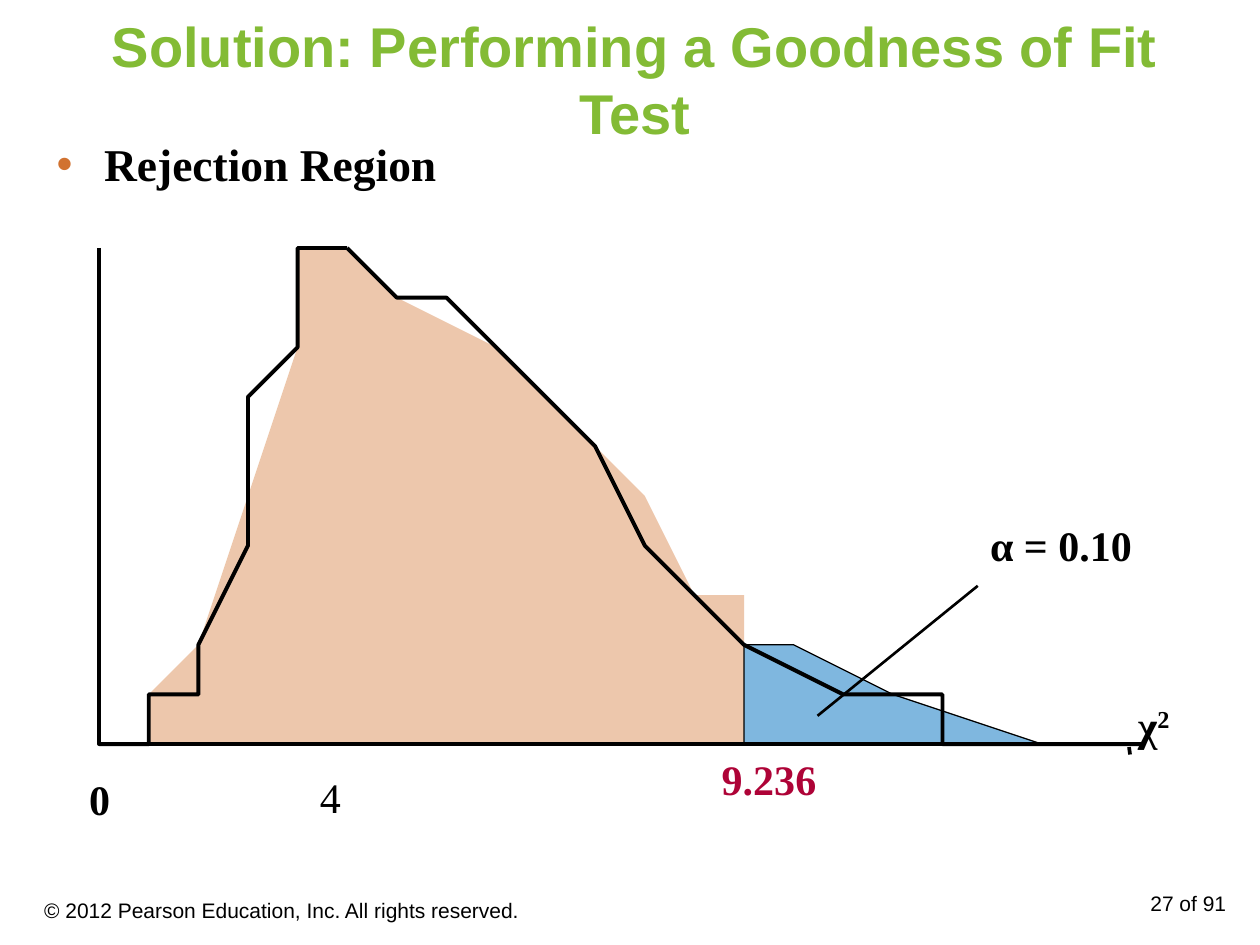
from dataclasses import dataclass

from lxml import etree
from pptx import Presentation
from pptx import util as u
from pptx.dml import color
from pptx.enum import shapes, text
from pptx.oxml import ns

SERIF, SANS = "Times New Roman", "Arial"
BLACK = "000000"
AXIS_LEFT, PEAK_X, AXIS_RIGHT = 2.34, 6.6, 22.76
PEAK_Y, BASELINE = 4.98, 15.06
STEPS = (0, 2, 3, 4, 5, 6, 7, 9, 11, 13, 14, 15, 16, 17, 18, 19)
HEIGHTS = (BASELINE, 14.96, 14.83, 14.68, 14.43, 14.12, 13.72, 12.55,
           10.9, 8.92, 7.9, 6.99, 6.15, 5.51, 5.11, PEAK_Y)

Point = tuple[float, float]


@dataclass(frozen=True)
class Label:
    words: str
    left: float
    top: float
    width: float
    height: float
    size: float = 24
    font: str = SERIF
    ink: str = BLACK
    bold: bool = True
    align: text.PP_ALIGN = text.PP_ALIGN.LEFT
    anchor: text.MSO_ANCHOR = text.MSO_ANCHOR.TOP
    inset: bool = True
    superscript: str = ""
    bullet: str = ""


@dataclass(frozen=True)
class Outline:
    points: tuple[Point, ...]
    fill: str = ""
    opacity: int = 100
    line: str = ""
    weight: float = 0


def rgb(value: str) -> color.RGBColor:
    return color.RGBColor.from_string(value)


def curve_side(foot: float) -> tuple[Point, ...]:
    reach = (PEAK_X - foot) / STEPS[-1]
    return tuple((foot + step * reach, y) for step, y in zip(STEPS, HEIGHTS))


def add_bullet(para, ink: str) -> None:
    properties = para._p.get_or_add_pPr()
    properties.set("marL", str(u.Cm(0.96)))
    properties.set("indent", str(-u.Cm(0.96)))
    tint = etree.SubElement(properties, ns.qn("a:buClr"))
    etree.SubElement(tint, ns.qn("a:srgbClr"), val=ink)
    etree.SubElement(properties, ns.qn("a:buFont"), typeface=SANS)
    etree.SubElement(properties, ns.qn("a:buChar"), char="•")


def draw_label(page, label: Label) -> None:
    box = page.shapes.add_textbox(u.Cm(label.left), u.Cm(label.top),
                                  u.Cm(label.width), u.Cm(label.height))
    frame = box.text_frame
    frame.word_wrap = True
    frame.vertical_anchor = label.anchor
    if not label.inset:
        frame.margin_left = frame.margin_right = 0
        frame.margin_top = frame.margin_bottom = 0
    para = frame.paragraphs[0]
    para.alignment = label.align
    if label.bullet:
        add_bullet(para, label.bullet)
    para.font.name = label.font
    para.font.size = u.Pt(label.size)
    para.font.bold = label.bold
    para.font.color.rgb = rgb(label.ink)
    para.add_run().text = label.words
    if label.superscript:
        span = para.add_run()
        span.text = label.superscript
        span._r.get_or_add_rPr().set("baseline", "30000")


def draw_outline(page, outline: Outline) -> None:
    start, *others = outline.points
    builder = page.shapes.build_freeform(*start, scale=u.Cm(1))
    builder.add_line_segments(others, close=bool(outline.fill))
    shape = builder.convert_to_shape()
    shape.shadow.inherit = False
    if outline.fill:
        shape.fill.solid()
        shape.fill.fore_color.rgb = rgb(outline.fill)
        if outline.opacity < 100:
            tint = shape._element.spPr.find(".//" + ns.qn("a:srgbClr"))
            etree.SubElement(tint, ns.qn("a:alpha"), val=str(outline.opacity * 1000))
    else:
        shape.fill.background()
    if outline.line:
        shape.line.color.rgb = rgb(outline.line)
        shape.line.width = u.Pt(outline.weight)
    else:
        shape.line.fill.background()


def draw_line(page, start: Point, end: Point, weight: float) -> None:
    line = page.shapes.add_connector(shapes.MSO_CONNECTOR.STRAIGHT,
                                     *map(u.Cm, start + end))
    line.line.color.rgb = rgb(BLACK)
    line.line.width = u.Pt(weight)
    etree.SubElement(line._element.spPr, ns.qn("a:effectLst"))


BODY = ((2.64, 15.01), (3.43, 14.45), (4.06, 13.31), (5, 9.93), (5.82, 6.58),
        (6.3, 5.21), (6.53, 5), (6.83, 5), (7.42, 5.13), (8.38, 5.59),
        (9.68, 6.71), (11.02, 8.03), (12.95, 10.36), (14.12, 11.51),
        (14.91, 12.32), (15.34, 12.67), (15.32, BASELINE))
TAIL = ((20.52, 14.94), (18.39, 14.38), (18.01, 14.22), (17.65, 14.05),
        (16.41, 13.46), (15.93, 13.13), (15.34, 12.65), (15.34, BASELINE),
        (19.96, 15.01), (20.4, 14.99), (20.57, 14.96))
AXES = ((AXIS_LEFT, PEAK_Y), (AXIS_LEFT, BASELINE), (AXIS_RIGHT, BASELINE))

OUTLINES = (
    Outline(BODY, fill="EDC7AC"),
    Outline(TAIL, fill="0070C0", opacity=50, line=BLACK, weight=0.75),
    Outline(curve_side(AXIS_RIGHT), line=BLACK, weight=2.25),
    Outline(curve_side(AXIS_LEFT), line=BLACK, weight=2.25),
    Outline(AXES, line=BLACK, weight=2.13),
)

LABELS = (
    Label("Solution: Performing a Goodness of Fit Test", 0.74, 0, 24.13, 3.18,
          size=32, font=SANS, ink="83BB35", align=text.PP_ALIGN.CENTER,
          anchor=text.MSO_ANCHOR.MIDDLE),
    Label("Rejection Region", 0.89, 2.62, 12.04, 1.63, size=26, bullet="D17230"),
    Label("α = 0.10", 19.71, 10.34, 4.19, 1.27),
    Label("χ", 22.94, 14.1, 1.93, 2.92, inset=False, superscript="2"),
    Label("0", 1.8, 15.6, 1.19, 2.92, inset=False),
    Label("9.236", 14.55, 15.19, 2.13, 1.02, ink="AE0337", inset=False),
    Label("4", 6.2, 15.42, 1.2, 1.27, bold=False),
    Label("© 2012 Pearson Education, Inc. All rights reserved.",
          0.64, 17.83, 12.07, 1.02, size=12, font=SANS, bold=False,
          anchor=text.MSO_ANCHOR.MIDDLE),
    Label("27 of 91", 19.05, 17.83, 5.92, 1.02, size=12, font=SANS, bold=False,
          align=text.PP_ALIGN.RIGHT),
)


def main() -> None:
    deck = Presentation()
    deck.slide_width, deck.slide_height = u.Cm(25.4), u.Cm(19.05)
    page = deck.slides.add_slide(deck.slide_layouts[6])
    for outline in OUTLINES:
        draw_outline(page, outline)
    draw_line(page, (AXIS_RIGHT, BASELINE), (22.78, 15.21), 2.13)
    draw_line(page, (19.71, 11.81), (16.48, 14.43), 1.5)
    for label in LABELS:
        draw_label(page, label)
    deck.save("out.pptx")


if __name__ == "__main__":
    main()
